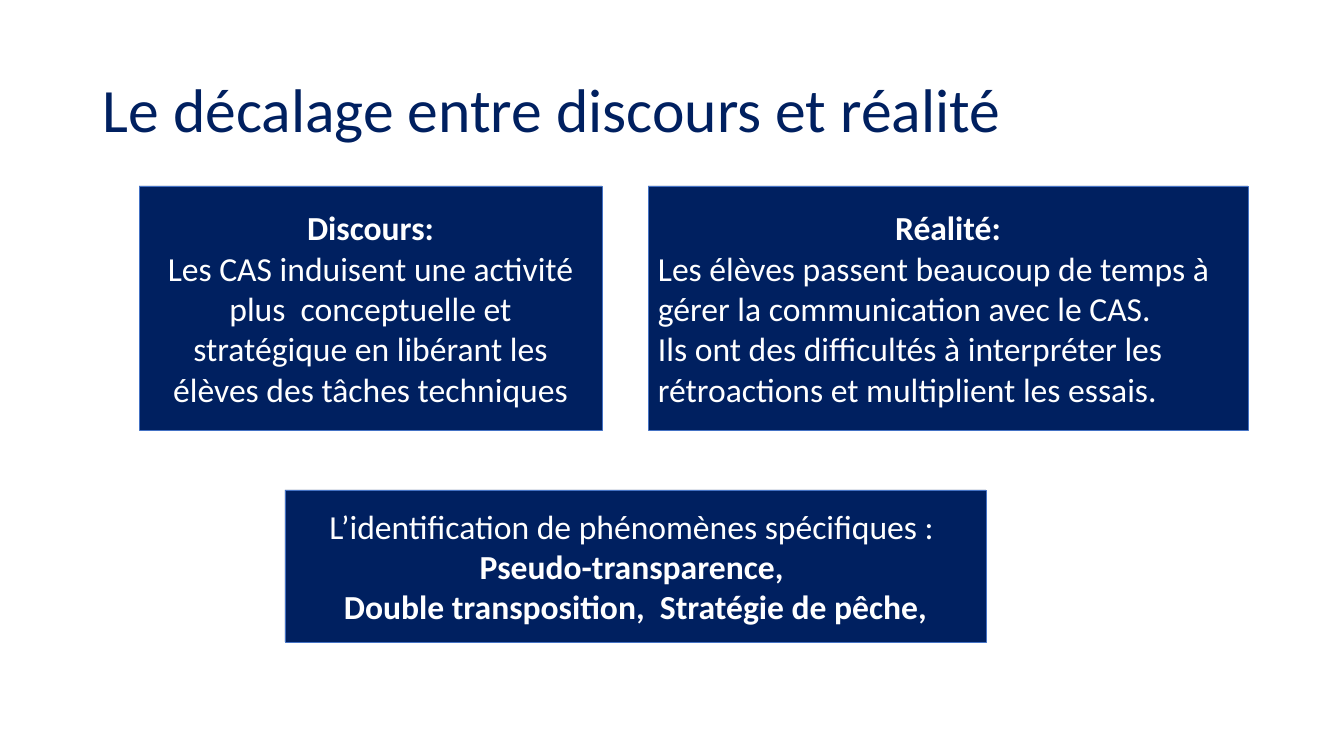
import pptx
import pptx.util
import pptx.dml.color
import pptx.enum.shapes
import pptx.enum.text

PX = 914400 / 100.8
NAVY, BLUE, WHITE = "002060", "4472C4", "FFFFFF"
LEFT = pptx.enum.text.PP_ALIGN.LEFT
MID = pptx.enum.text.PP_ALIGN.CENTER


def rgb(code):
    return pptx.dml.color.RGBColor.from_string(code)


def write(par, text, size=24, color=WHITE, bold=False, align=MID):
    """Add one run to a paragraph and set the paragraph's alignment."""
    par.alignment = align
    run = par.add_run()
    run.text = text
    run.font.name = "Calibri"
    run.font.size = pptx.util.Pt(size)
    run.font.bold = bold
    run.font.color.rgb = rgb(color)


deck = pptx.Presentation()
deck.slide_width = round(1344 * PX)
deck.slide_height = round(756 * PX)
slide = deck.slides.add_slide(deck.slide_layouts[6])

# Title
title = slide.shapes.add_textbox(*[round(n * PX) for n in (93, 40, 1159, 146)])
frame = title.text_frame
frame.word_wrap = True
frame.vertical_anchor = pptx.enum.text.MSO_ANCHOR.MIDDLE
frame.paragraphs[0].line_spacing = 0.9
write(frame.paragraphs[0], "Le décalage entre discours et réalité",
      size=44, color=NAVY, align=LEFT)

# Each box: place, then paragraphs of (alignment, runs of (text, bold))
boxes = [
    ((139, 186, 463, 244), [
        (MID, [("Discours:", True)]),
        (MID, [(" Les CAS induisent une activité  plus  conceptuelle et "
                "stratégique en libérant les élèves des tâches techniques", False)]),
    ]),
    ((648, 186, 600, 244), [
        (MID, [("Réalité:", True)]),
        (LEFT, [("Les élèves passent beaucoup de temps à gérer la "
                 "communication avec le CAS.", False)]),
        (LEFT, [("Ils ont des difficultés à interpréter les rétroactions "
                 "et multiplient les essais.", False)]),
    ]),
    ((285, 490, 701, 152), [
        (MID, [("L’identification de phénomènes spécifiques :  ", False),
               ("Pseudo-transparence, ", True)]),
        (MID, [("Double transposition,  Stratégie de pêche,", True)]),
    ]),
]
for place, pars in boxes:
    box = slide.shapes.add_shape(pptx.enum.shapes.MSO_SHAPE.RECTANGLE,
                                 *[round(n * PX) for n in place])
    box.shadow.inherit = False
    box.fill.solid()
    box.fill.fore_color.rgb = rgb(NAVY)
    box.line.color.rgb = rgb(BLUE)
    box.line.width = pptx.util.Pt(0.5)
    frame = box.text_frame
    frame.word_wrap = True
    frame.vertical_anchor = pptx.enum.text.MSO_ANCHOR.MIDDLE
    for i, (align, runs) in enumerate(pars):
        par = frame.add_paragraph() if i else frame.paragraphs[0]
        for text, bold in runs:
            write(par, text, bold=bold, align=align)

deck.save("out.pptx")
